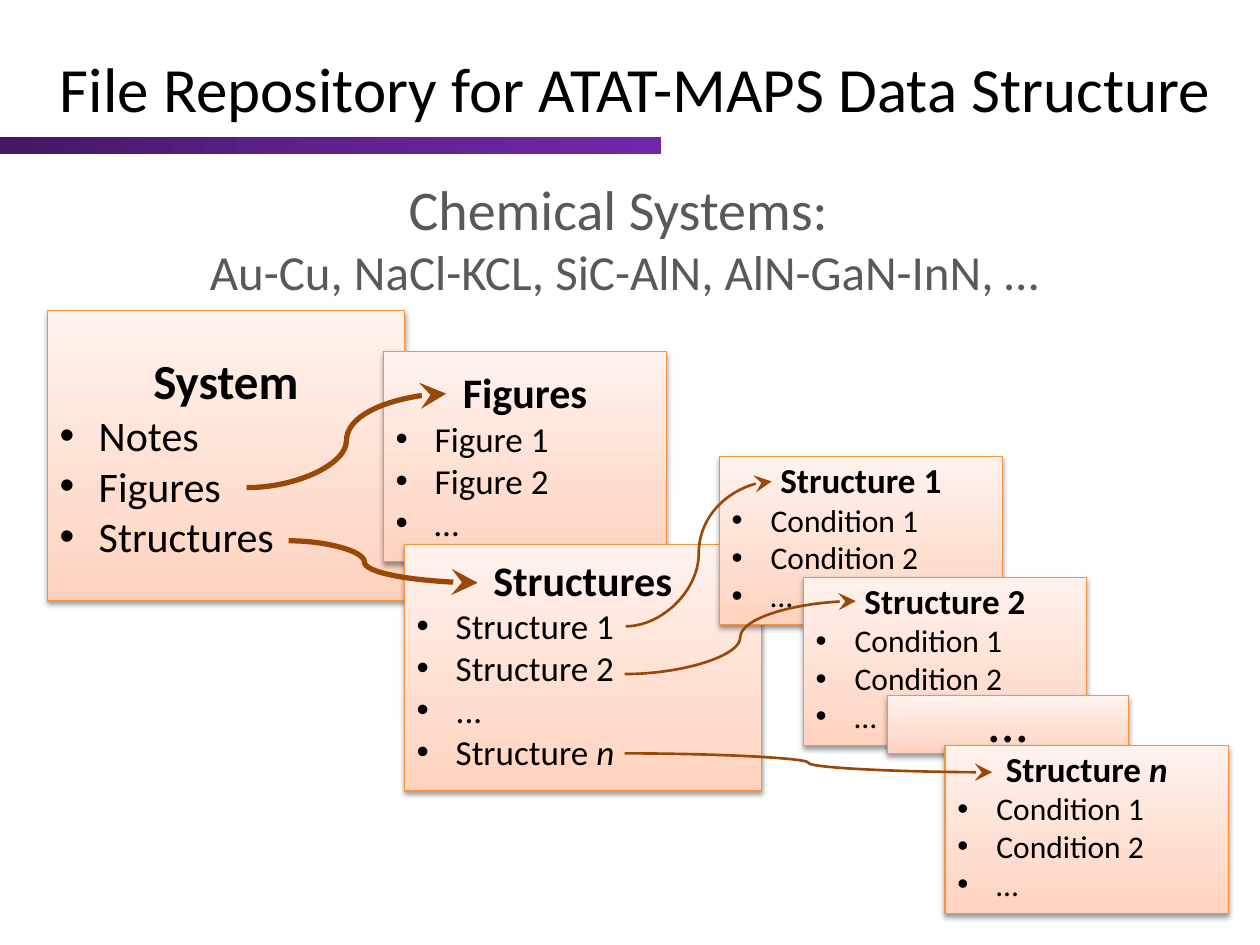
from dataclasses import dataclass

from lxml.etree import SubElement
from pptx import Presentation
from pptx.dml.color import RGBColor
from pptx.enum.shapes import MSO_CONNECTOR, MSO_SHAPE
from pptx.enum.text import MSO_ANCHOR, PP_ALIGN
from pptx.oxml import parse_xml
from pptx.oxml.ns import nsdecls, qn
from pptx.util import Inches, Pt

HUES = {
    "ink": "000000", "grey": "595959", "edge": "F69240", "curve": "984807",
    "low": "FFD2BD", "mid": "FFDED0", "high": "FFF2ED",
    "dark": "431764", "plum": "5F218E", "bright": "7128A8",
}
FONT = "Calibri"
CELL = Inches(1) / 24  # the slide is 240 columns by 180 rows
PEACH = ((0, "low"), (35, "mid"), (100, "high"))
PURPLE = ((0, "dark"), (50, "plum"), (100, "bright"))


@dataclass
class Card:
    col: float
    row: float
    wide: float
    high: float
    head: str
    items: tuple = ()
    big: int = 20
    small: int = 18
    bold: bool = True
    lift: float = 0.07


@dataclass
class Curve:
    start: tuple
    end: tuple
    width: float = 1.5
    bend: int = 50


CONDS = ("Condition 1", "Condition 2", "…")
CARDS = (
    Card(9, 59.2, 68, 55.3, "System", ("Notes", "Figures", "Structures"), 28, 24, lift=0),
    Card(73, 67, 54, 40, "Figures", ("Figure 1", "Figure 2", "…"), 24, 20, lift=0.03),
    Card(77, 103.7, 68, 47, "Structures",
         ("Structure 1", "Structure 2", "...", "Structure n"), 24, 20),
    Card(137, 87, 54, 32, "Structure 1", CONDS),
    Card(153, 110, 54, 32, "Structure 2", CONDS),
    Card(169, 132.5, 46, 11, "…", big=32, bold=False),
    Card(180, 142, 54, 32, "Structure n", CONDS),
)
CURVES = (
    Curve((47, 92.9), (85, 75), 3),
    Curve((55, 103), (91, 111), 3, 40),
    Curve((119, 143.5), (189, 147.1)),
    Curve((119.2, 119.3), (147, 91.7)),
    Curve((119, 128.4), (163, 114.5)),
)


def grid(*cells: float) -> list:
    return [round(n * CELL) for n in cells]


def hue(name: str) -> RGBColor:
    return RGBColor.from_string(HUES[name])


def write(para, text: str, size: int, tint: str = "ink", bold: bool = False) -> None:
    """Add text to a paragraph, with a closing index n in italics."""
    parts = [(text[:-1], None), ("n", True)] if text.endswith(" n") else [(text, None)]
    for words, slant in parts:
        run = para.add_run()
        run.text = words
        style = {"name": FONT, "size": Pt(size), "bold": bold, "italic": slant}
        for key, value in style.items():
            setattr(run.font, key, value)
        run.font.color.rgb = hue(tint)


def blend(shape, stops: tuple, angle: int) -> None:
    marks = "".join(
        f'<a:gs pos="{at * 1000}"><a:srgbClr val="{HUES[name]}"/></a:gs>'
        for at, name in stops)
    fill = parse_xml(
        f'<a:gradFill {nsdecls("a")} rotWithShape="1"><a:gsLst>{marks}</a:gsLst>'
        f'<a:lin ang="{angle * 60000}" scaled="0"/></a:gradFill>')
    shape._element.spPr.find(qn("a:prstGeom")).addnext(fill)


def shade(shape) -> None:
    shape.shadow.inherit = False
    glow = shape._element.spPr.find(qn("a:effectLst"))
    glow.append(parse_xml(
        f'<a:outerShdw {nsdecls("a")} blurRad="{Pt(3.1)}" dist="{Pt(1.6)}" '
        'dir="5400000" rotWithShape="0"><a:srgbClr val="000000">'
        '<a:alpha val="38000"/></a:srgbClr></a:outerShdw>'))


def bullet(para) -> None:
    props = para._p.get_or_add_pPr()
    props.set("marL", str(Inches(0.31)))
    props.set("indent", str(-Inches(0.31)))
    SubElement(props, qn("a:buFont"), typeface="Arial")
    SubElement(props, qn("a:buChar"), char="•")


def draw_card(slide, card: Card) -> None:
    shape = slide.shapes.add_shape(
        MSO_SHAPE.RECTANGLE, *grid(card.col, card.row, card.wide, card.high))
    blend(shape, PEACH, 270)
    shape.line.color.rgb = hue("edge")
    shape.line.width = Pt(0.75)
    shade(shape)
    frame = shape.text_frame
    style = {"word_wrap": True, "vertical_anchor": MSO_ANCHOR.MIDDLE,
             "margin_top": 0, "margin_bottom": Inches(card.lift)}
    for key, value in style.items():
        setattr(frame, key, value)
    para = frame.paragraphs[0]
    para.alignment = PP_ALIGN.CENTER
    write(para, card.head, card.big, bold=card.bold)
    for item in card.items:
        para = frame.add_paragraph()
        para.alignment = PP_ALIGN.LEFT
        bullet(para)
        write(para, item, card.small)


def draw_curve(slide, curve: Curve) -> None:
    link = slide.shapes.add_connector(
        MSO_CONNECTOR.CURVE, *grid(*curve.start, *curve.end))
    link.line.color.rgb = hue("curve")
    link.line.width = Pt(curve.width)
    SubElement(link.line._get_or_add_ln(), qn("a:tailEnd"),
               type="stealth", w="lg", len="lg")
    props = link._element.spPr
    SubElement(props, qn("a:effectLst"))
    guides = props.find(qn("a:prstGeom")).get_or_add_avLst()
    SubElement(guides, qn("a:gd"), name="adj1", fmla=f"val {curve.bend * 1000}")


def main() -> None:
    deck = Presentation()
    deck.slide_width, deck.slide_height = Inches(10), Inches(7.5)
    slide = deck.slides.add_slide(deck.slide_layouts[5])

    # Title and the bar under it
    title = slide.shapes.title
    title.left, title.top, title.width, title.height = grid(6, 7.2, 230, 18.7)
    title.text_frame.vertical_anchor = MSO_ANCHOR.MIDDLE
    para = title.text_frame.paragraphs[0]
    para.alignment = PP_ALIGN.CENTER
    write(para, "File Repository for ATAT-MAPS Data Structure", 36)
    bar = slide.shapes.add_shape(MSO_SHAPE.RECTANGLE, *grid(0, 26, 126, 3.3))
    blend(bar, PURPLE, 0)
    bar.line.fill.background()
    bar.shadow.inherit = False

    # Chemical systems
    box = slide.shapes.add_textbox(*grid(34.3, 32, 167, 28.3))
    frame = box.text_frame
    frame.word_wrap = False
    lines = (("Chemical Systems:", 32),
             (" Au-Cu, NaCl-KCL, SiC-AlN, AlN-GaN-InN, …", 28))
    for spot, (text, size) in enumerate(lines):
        para = frame.add_paragraph() if spot else frame.paragraphs[0]
        para.alignment = PP_ALIGN.CENTER
        write(para, text, size, "grey")

    # Cards, then the curves that link them
    for card in CARDS:
        draw_card(slide, card)
    for curve in CURVES:
        draw_curve(slide, curve)
    deck.save("out.pptx")


if __name__ == "__main__":
    main()
